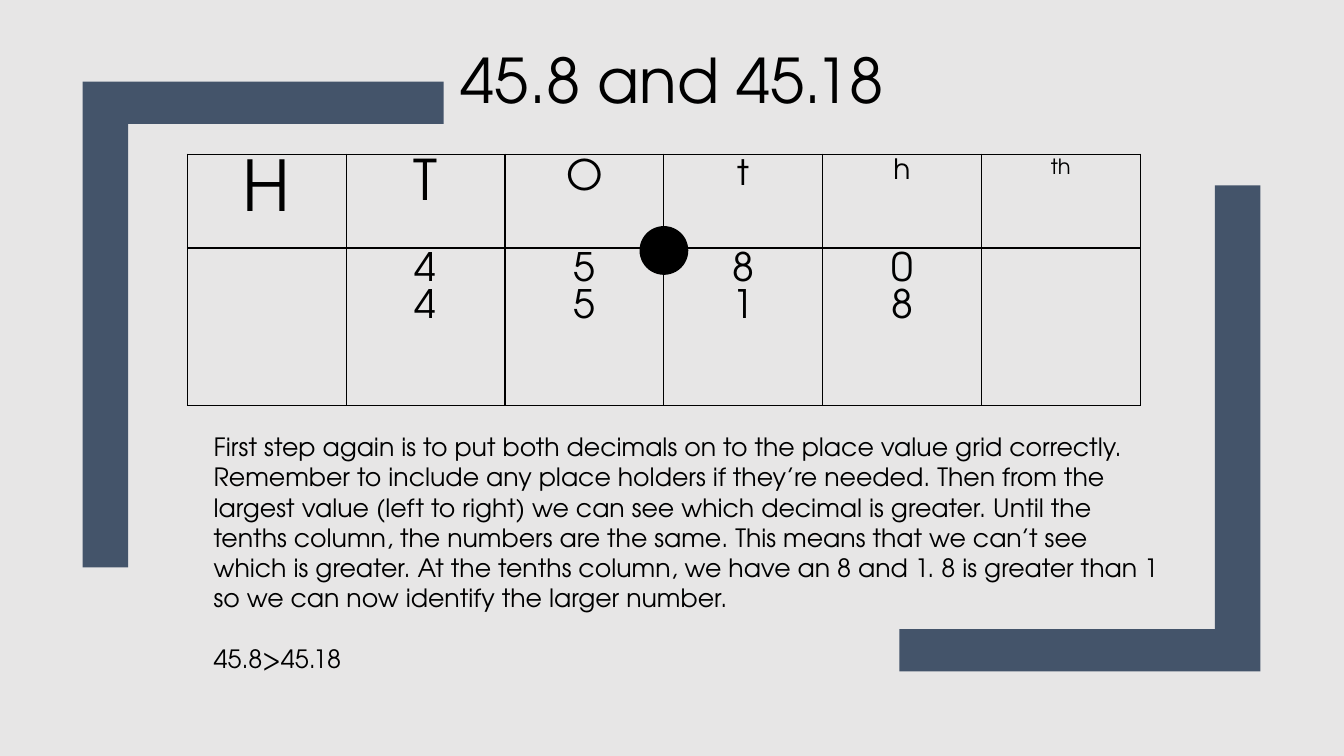
from lxml.etree import SubElement
from pptx import Presentation
from pptx.dml.color import RGBColor
from pptx.enum.shapes import MSO_SHAPE
from pptx.enum.text import MSO_ANCHOR, PP_ALIGN
from pptx.oxml.ns import qn
from pptx.util import Inches, Pt

FONT = "TeX Gyre Adventor"
BLACK, SLATE, GREY = "000000", "44546A", "E7E6E6"

TITLE = "45.8 and 45.18"
COLUMNS = [  # heading, heading size, digits of the two decimals
    ("H", 50, []),
    ("T", 40, ["4", "4"]),
    ("O", 30, ["5", "5"]),
    ("t", 25, ["8", "1"]),
    ("h", 20, ["0", "8"]),
    ("th", 15, []),
]
EXPLANATION = (
    "First step again is to put both decimals on to the place value grid correctly. "
    "Remember to include any place holders if they’re needed. Then from the largest "
    "value (left to right) we can see which decimal is greater. Until the tenths column, "
    "the numbers are the same. This means that we can’t see which is greater. At the "
    "tenths column, we have an 8 and 1. 8 is greater than 1 so we can now identify the "
    "larger number."
)
CONCLUSION = "45.8>45.18"

GRID_LEFT, GRID_TOP = 1.86, 1.53
COLUMN_WIDTH, ROW_HEIGHTS = 1.575, [0.93, 1.56]
DIGIT_SIZE = 28
POINT_SIZE = 0.47
BRACKET = [(8.92, 6.24), (12.05, 6.24), (12.05, 1.84), (12.5, 1.84), (12.5, 6.66), (8.92, 6.66)]
BRACKETS_CENTRE = (6.66, 3.735)


def color(hex_code):
    return RGBColor.from_string(hex_code)


def paint(shape, fill):
    shape.shadow.inherit = False
    shape.fill.solid()
    shape.fill.fore_color.rgb = color(fill)


def write(frame, lines, size, align=PP_ALIGN.LEFT):
    for i, line in enumerate(lines):
        paragraph = frame.add_paragraph() if i else frame.paragraphs[0]
        paragraph.alignment = align
        run = paragraph.add_run()
        run.text = line
        for name, value in {"name": FONT, "size": Pt(size)}.items():
            setattr(run.font, name, value)
        run.font.color.rgb = color(BLACK)


def add_borders(cell):
    properties = cell._tc.get_or_add_tcPr()
    for i, side in enumerate(("lnL", "lnR", "lnT", "lnB")):
        line = SubElement(properties, qn(f"a:{side}"), w=str(Pt(1)))
        properties.remove(line)
        properties.insert(i, line)
        fill = SubElement(line, qn("a:solidFill"))
        SubElement(fill, qn("a:srgbClr"), val=BLACK)


def add_bracket(slide, points):
    builder = slide.shapes.build_freeform(*map(Inches, points[0]), scale=1.0)
    builder.add_line_segments([tuple(map(Inches, point)) for point in points[1:]])
    bracket = builder.convert_to_shape()
    paint(bracket, SLATE)
    bracket.line.fill.background()


def add_grid(slide):
    grid = slide.shapes.add_table(
        2, len(COLUMNS), Inches(GRID_LEFT), Inches(GRID_TOP),
        Inches(COLUMN_WIDTH * len(COLUMNS)), Inches(sum(ROW_HEIGHTS))).table
    grid.first_row = grid.horz_banding = False
    for row, height in zip(grid.rows, ROW_HEIGHTS):
        row.height = Inches(height)
    for i, (heading, size, digits) in enumerate(COLUMNS):
        grid.columns[i].width = Inches(COLUMN_WIDTH)
        for row, (lines, points) in enumerate([([heading], size), (digits, DIGIT_SIZE)]):
            cell = grid.cell(row, i)
            cell.fill.background()
            add_borders(cell)
            write(cell.text_frame, lines, points, PP_ALIGN.CENTER)


def main():
    deck = Presentation()
    deck.slide_width, deck.slide_height = Inches(13.33), Inches(7.5)
    slide = deck.slides.add_slide(deck.slide_layouts[5])
    slide.background.fill.solid()
    slide.background.fill.fore_color.rgb = color(GREY)

    add_bracket(slide, BRACKET)
    centre_x, centre_y = BRACKETS_CENTRE
    add_bracket(slide, [(2 * centre_x - x, 2 * centre_y - y) for x, y in BRACKET])

    title = slide.shapes.title
    title.left, title.top, title.width, title.height = map(Inches, (1.67, 0.36, 10, 0.84))
    title.text_frame.word_wrap = True
    title.text_frame.vertical_anchor = MSO_ANCHOR.MIDDLE
    write(title.text_frame, [TITLE], 44, PP_ALIGN.CENTER)

    add_grid(slide)

    point_x = GRID_LEFT + 3 * COLUMN_WIDTH - POINT_SIZE / 2
    decimal_point = slide.shapes.add_shape(
        MSO_SHAPE.OVAL, *map(Inches, (point_x, 2.25, POINT_SIZE, POINT_SIZE)))
    paint(decimal_point, BLACK)
    decimal_point.line.color.rgb = color(BLACK)
    decimal_point.line.width = Pt(1)

    explanation = slide.shapes.add_textbox(*map(Inches, (2.02, 4.23, 9.65, 2.52))).text_frame
    explanation.word_wrap = True
    write(explanation, [EXPLANATION, CONCLUSION], 18)
    explanation.paragraphs[1].space_before = Pt(21.6)

    deck.save("out.pptx")


if __name__ == "__main__":
    main()
